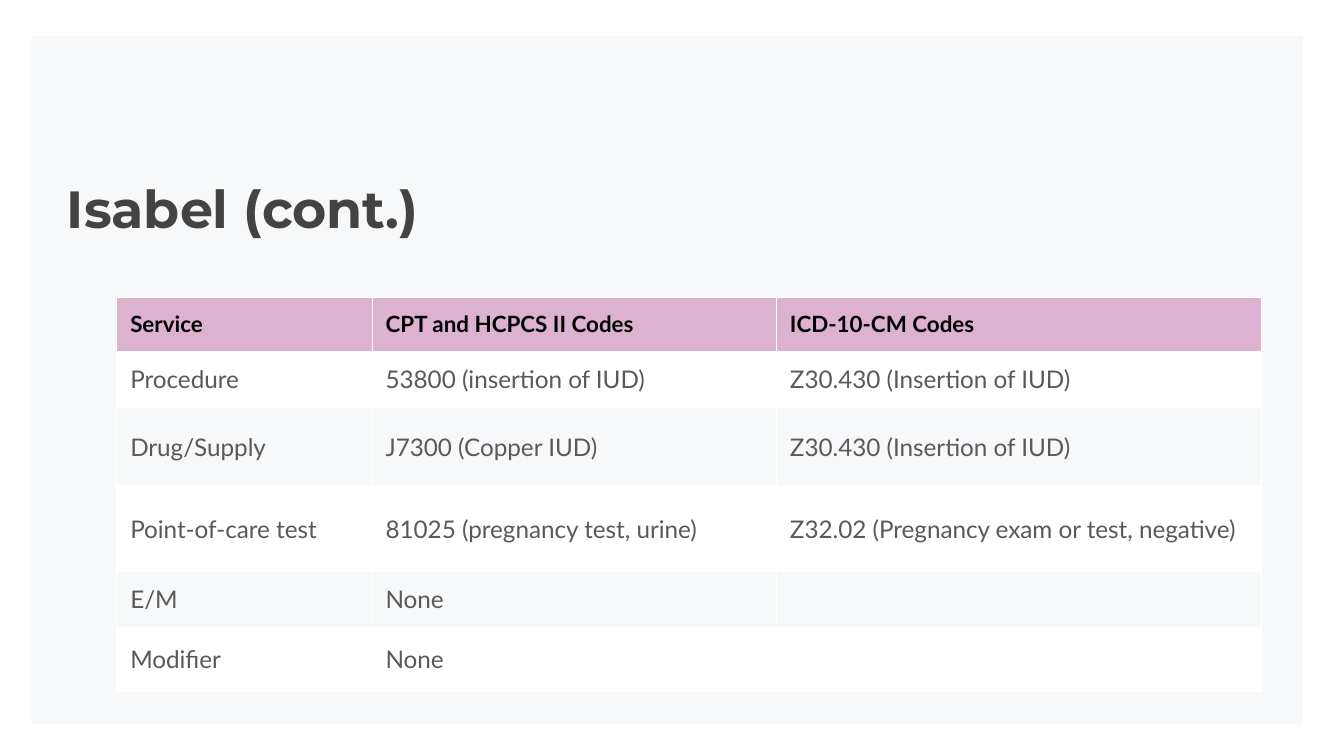
from lxml.etree import SubElement
from pptx import Presentation
from pptx.dml.color import RGBColor
from pptx.enum.shapes import MSO_SHAPE
from pptx.enum.text import MSO_ANCHOR
from pptx.oxml.ns import qn
from pptx.util import Pt

NAVY = RGBColor(0x07, 0x37, 0x63)
PINK = RGBColor(0xC8, 0x7D, 0xB1)
WHITE = RGBColor(0xFF, 0xFF, 0xFF)
BLACK = RGBColor(0x00, 0x00, 0x00)
DARK_GRAY = RGBColor(0x43, 0x43, 0x43)
GRAY = RGBColor(0x59, 0x59, 0x59)

COLUMN_WIDTHS = [136.8, 216.6, 260]
ROW_HEIGHTS = [28.8, 30.2, 42.2, 45.5, 30.2, 34]
ROWS = [
    ["Service", "CPT and HCPCS II Codes", "ICD-10-CM Codes"],
    ["Procedure", "53800 (insertion of IUD)", "Z30.430 (Insertion of IUD)"],
    ["Drug/Supply", "J7300 (Copper IUD)", "Z30.430 (Insertion of IUD)"],
    ["Point-of-care test", "81025 (pregnancy test, urine)",
     "Z32.02 (Pregnancy exam or test, negative)"],
    ["E/M", "None", ""],
    ["Modifier", "None", ""],
]


class SlideBuilder:
    title_font = "Montserrat"
    body_font = "Lato"
    inset = Pt(7.2)

    def __init__(self, slide):
        self.slide = slide

    def fill(self, target, color, opacity=100):
        """Fill a shape or cell with a solid colour, opacity in percent."""
        target.fill.solid()
        target.fill.fore_color.rgb = color
        if opacity < 100:
            color_element = target.fill._xPr.find(qn("a:solidFill"))[0]
            SubElement(color_element, qn("a:alpha"), val=str(opacity * 1000))

    def set_text(self, frame, text, font, size, color, bold):
        frame.text = text
        for span in frame.paragraphs[0].runs:
            span.font.name = font
            span.font.size = Pt(size)
            span.font.color.rgb = color
            span.font.bold = bold

    def set_margins(self, target, margin):
        target.margin_left = target.margin_right = margin
        target.margin_top = target.margin_bottom = margin

    def panel(self, left, top, width, height):
        panel = self.slide.shapes.add_shape(
            MSO_SHAPE.RECTANGLE, Pt(left), Pt(top), Pt(width), Pt(height))
        panel.shadow.inherit = False
        panel.line.fill.background()
        self.fill(panel, NAVY, 3)

    def title(self, text, left, top, width, height):
        box = self.slide.shapes.add_textbox(Pt(left), Pt(top), Pt(width), Pt(height))
        frame = box.text_frame
        frame.word_wrap = True
        self.set_margins(frame, self.inset)
        self.set_text(frame, text, self.title_font, 28, DARK_GRAY, True)

    def borders(self, cell):
        """Draw thin white lines on all sides; they must precede the fill."""
        properties = cell._tc.get_or_add_tcPr()
        for side in ("lnL", "lnR", "lnT", "lnB"):
            line = SubElement(properties, qn(f"a:{side}"), w=str(Pt(0.75)))
            solid = SubElement(line, qn("a:solidFill"))
            SubElement(solid, qn("a:srgbClr"), val=str(WHITE))

    def cell(self, cell, text, row_index):
        self.borders(cell)
        self.set_margins(cell, self.inset if text else 0)
        if row_index == 0:
            self.fill(cell, PINK, 57)
            self.set_text(cell.text_frame, text, self.body_font, 12, BLACK, True)
            return
        cell.vertical_anchor = MSO_ANCHOR.MIDDLE
        if row_index % 2:
            self.fill(cell, WHITE)
        else:
            cell.fill.background()
        if text:
            self.set_text(cell.text_frame, text, self.body_font, 13, GRAY, False)

    def table(self, rows, left, top, widths, heights):
        table = self.slide.shapes.add_table(
            len(rows), len(widths), Pt(left), Pt(top),
            Pt(sum(widths)), Pt(sum(heights))).table
        table.horz_banding = False
        for column, width in zip(table.columns, widths):
            column.width = Pt(width)
        for row_index, texts in enumerate(rows):
            table.rows[row_index].height = Pt(heights[row_index])
            for column_index, text in enumerate(texts):
                self.cell(table.cell(row_index, column_index), text, row_index)


def main():
    deck = Presentation()
    deck.slide_width, deck.slide_height = Pt(720), Pt(405)
    page = SlideBuilder(deck.slides.add_slide(deck.slide_layouts[6]))
    page.panel(16.8, 19.4, 681.2, 368.8)
    page.title("Isabel (cont.)", 28.8, 87.2, 671, 45.4)
    page.table(ROWS, 62.6, 159.3, COLUMN_WIDTHS, ROW_HEIGHTS)
    deck.save("out.pptx")


if __name__ == "__main__":
    main()
